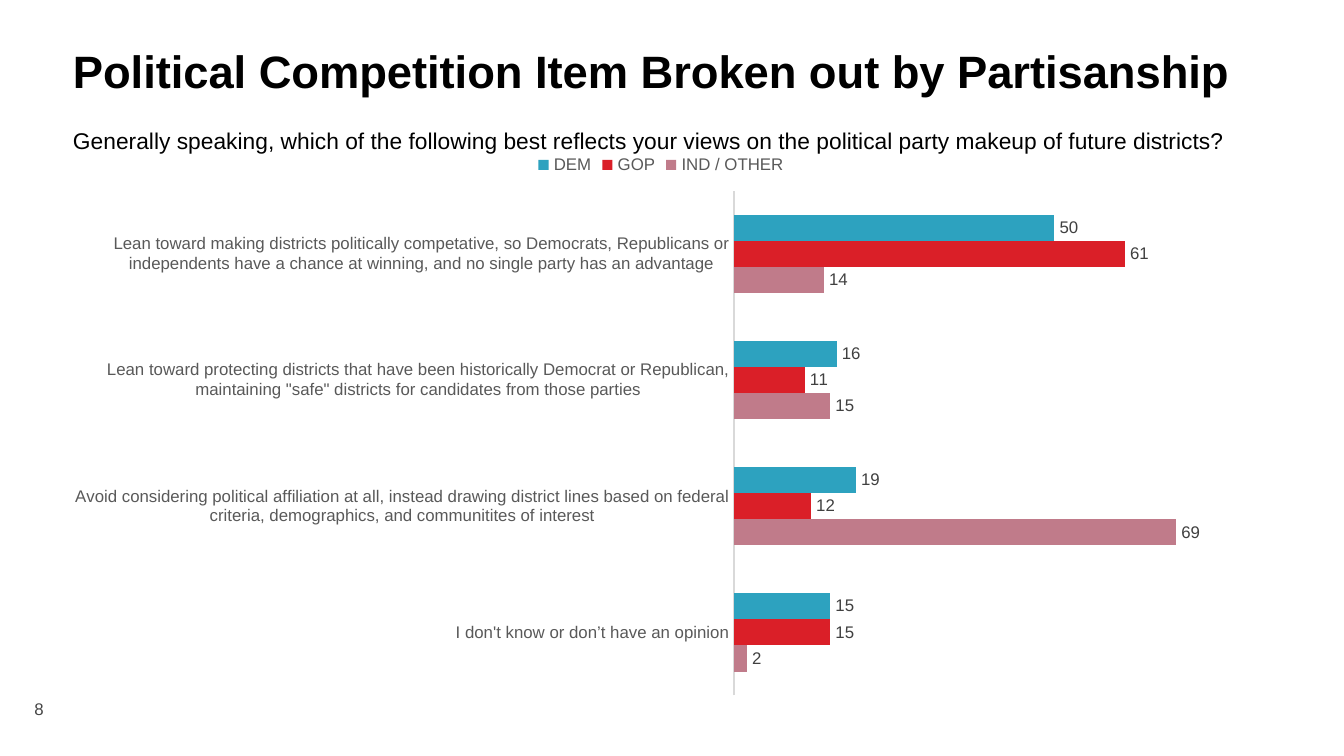
from lxml import etree
from pptx import Presentation
from pptx.chart.data import CategoryChartData
from pptx.dml.color import RGBColor
from pptx.enum.chart import XL_CHART_TYPE, XL_LABEL_POSITION, XL_LEGEND_POSITION, XL_TICK_MARK
from pptx.enum.text import MSO_ANCHOR, PP_ALIGN
from pptx.oxml.ns import qn
from pptx.util import Emu, Pt

BAR = XL_CHART_TYPE.BAR_CLUSTERED
OUTSIDE = XL_LABEL_POSITION.OUTSIDE_END
LEGEND_TOP = XL_LEGEND_POSITION.TOP
NO_TICK = XL_TICK_MARK.NONE
TOP, MIDDLE = MSO_ANCHOR.TOP, MSO_ANCHOR.MIDDLE
LEFT, CENTER = PP_ALIGN.LEFT, PP_ALIGN.CENTER

SCALE = 914400 / 134.4
FONT = "Arial"
COLORS = {
    "black": "000000",
    "number": "464646",
    "axis_text": "595959",
    "value_text": "404040",
    "axis_line": "D9D9D9",
    "IND / OTHER": "C07B8A",
    "GOP": "DA1F28",
    "DEM": "2DA2BF",
}
ANSWERS = [
    "I don't know or don’t have an opinion",
    "Avoid considering political affiliation at all, instead drawing district lines "
    "based on federal criteria, demographics, and communitites of interest",
    "Lean toward protecting districts that have been historically Democrat or Republican, "
    "maintaining \"safe\" districts for candidates from those parties",
    "Lean toward making districts politically competative, so Democrats, Republicans or "
    "independents have a chance at winning, and no single party has an advantage",
]
SHARES = {
    "IND / OTHER": (2, 69, 15, 14),
    "GOP": (15, 12, 11, 61),
    "DEM": (15, 19, 16, 50),
}
PLOT_AREA = {"x": 0.56, "y": 0.09, "w": 0.42, "h": 0.89}


def px(length):
    return Emu(round(length * SCALE))


def color(name):
    return RGBColor.from_string(COLORS[name])


def style_font(font, size, color_name, bold=False):
    font.name = FONT
    font.size = Pt(size)
    font.bold = bold
    font.color.rgb = color(color_name)


def add_text(slide, box, lines, align=LEFT, anchor=TOP):
    frame = slide.shapes.add_textbox(*map(px, box)).text_frame
    frame.word_wrap = True
    frame.vertical_anchor = anchor
    frame.margin_left = frame.margin_right = frame.margin_top = frame.margin_bottom = 0
    for index, (text, size, color_name, bold, gap) in enumerate(lines):
        paragraph = frame.add_paragraph() if index else frame.paragraphs[0]
        paragraph.alignment = align
        paragraph.space_before = Pt(gap)
        run = paragraph.add_run()
        run.text = text
        style_font(run.font, size, color_name, bold)


def place_plot(chart):
    plot_area = chart.plots[0]._element.getparent()
    layout = plot_area.find(qn("c:layout"))
    if layout is None:
        layout = etree.Element(qn("c:layout"))
        plot_area.insert(0, layout)
    manual = etree.SubElement(layout, qn("c:manualLayout"))
    settings = {"layoutTarget": "inner", "xMode": "edge", "yMode": "edge", **PLOT_AREA}
    for tag, value in settings.items():
        etree.SubElement(manual, qn(f"c:{tag}")).set("val", str(value))


def style_axes(chart):
    answers = chart.category_axis
    answers.major_tick_mark = answers.minor_tick_mark = NO_TICK
    answers.format.line.color.rgb = color("axis_line")
    answers.format.line.width = Pt(0.75)
    style_font(answers.tick_labels.font, 9, "axis_text")
    shares = chart.value_axis
    shares.minimum_scale, shares.maximum_scale = 0, 80
    shares.has_major_gridlines = False
    shares.visible = False


def style_bars(plot):
    plot.gap_width = 182
    plot.overlap = 0
    plot.vary_by_categories = False
    for party in plot.series:
        party.format.fill.solid()
        party.format.fill.fore_color.rgb = color(party.name)
        labels = party.data_labels
        labels.show_value = True
        labels.position = OUTSIDE
        style_font(labels.font, 9, "value_text")


def add_party_chart(slide, box):
    data = CategoryChartData()
    data.categories = ANSWERS
    for party, values in SHARES.items():
        data.add_series(party, values)
    chart = slide.shapes.add_chart(BAR, *map(px, box), data).chart
    chart.has_title = False
    style_font(chart.font, 10, "black")
    chart.has_legend = True
    chart.legend.position = LEGEND_TOP
    chart.legend.include_in_layout = False
    style_font(chart.legend.font, 9, "axis_text")
    style_axes(chart)
    style_bars(chart.plots[0])
    place_plot(chart)


def main():
    deck = Presentation()
    deck.slide_width, deck.slide_height = px(1344), px(756)
    slide = deck.slides.add_slide(deck.slide_layouts[6])
    add_text(slide, (0, 688, 78, 42), [("8", 9, "number", False, 0)], CENTER, MIDDLE)
    add_text(slide, (73, 43, 1199, 98), [
        ("Political Competition Item Broken out by Partisanship", 24.3, "black", True, 0),
        ("Generally speaking, which of the following best reflects your views on the "
         "political party makeup of future districts?", 12.2, "black", False, 15.5),
    ])
    add_party_chart(slide, (51, 140, 1220, 567))
    deck.save("out.pptx")


if __name__ == "__main__":
    main()
